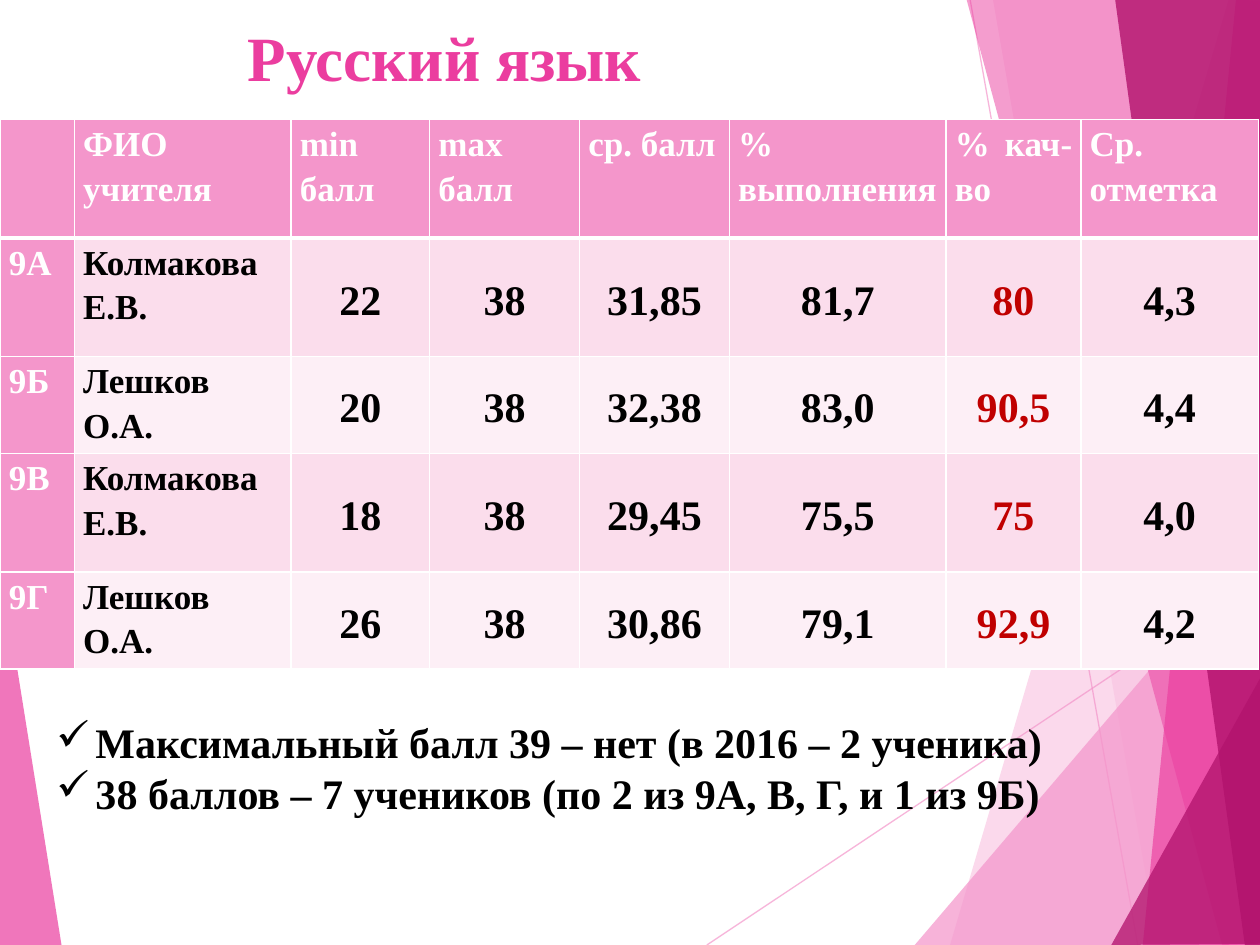
from lxml.etree import SubElement
from pptx import Presentation
from pptx.dml.color import RGBColor
from pptx.enum.shapes import MSO_CONNECTOR as Connector
from pptx.enum.text import MSO_ANCHOR as Anchor, PP_ALIGN as Align
from pptx.oxml.ns import qn
from pptx.util import Inches, Pt

COLORS = {
    "light": "F496CB", "pink": "EB3D9F", "dark": "B2136D",
    "band": "FBDDEC", "pale": "FDEFF6",
    "white": "FFFFFF", "black": "000000", "red": "C00000",
}


def set_alpha(fill_parent, percent):
    color = fill_parent.find(".//" + qn("a:srgbClr"))
    SubElement(color, qn("a:alpha"), val=str(percent * 1000))


def write(paragraph, text, size, color, **formats):
    run = paragraph.add_run()
    run.text = text
    for name, value in {"name": "Times New Roman", "size": Pt(size), "bold": True}.items():
        setattr(run.font, name, value)
    run.font.color.rgb = RGBColor.from_string(COLORS[color])
    for name, value in formats.items():
        setattr(paragraph, name, value)


presentation = Presentation()
presentation.slide_width = Inches(10)
presentation.slide_height = Inches(7.5)
slide = presentation.slides.add_slide(presentation.slide_layouts[6])
shapes = slide.shapes

for ends in [(5.61, 7.5, 10.01, 4.57), (7.7, 0, 9.03, 7.5)]:
    line = shapes.add_connector(Connector.STRAIGHT, *[Inches(value) for value in ends])
    line.line.width = Pt(0.75)
    line.line.color.rgb = RGBColor.from_string(COLORS["light"])
    properties = line.element.spPr
    set_alpha(properties, 70)
    SubElement(properties, qn("a:effectLst"))

facets = [
    ("light", 36, [(9.75, 0), (7.54, 7.5), (10.02, 7.51), (10.01, 0.01)]),
    ("light", 20, [(7.88, -0.01), (9.19, 7.5), (10.01, 7.5), (10.01, -0.01)]),
    ("light", 72, [(7.26, 7.5), (10, 4.29), (10.01, 7.5)]),
    ("pink", 50, [(7.67, -0.01), (9.7, 7.5), (10.01, 7.49), (10.01, -0.01)]),
    ("pink", 66, [(9.81, -0.01), (9.07, 7.5), (10.01, 7.5), (10, -0.01)]),
    ("dark", 80, [(8.85, -0.01), (9.88, 7.5), (10.02, 7.5), (10, -0.01)]),
    ("dark", 76, [(8.82, 7.5), (10.02, 5.35), (10.02, 7.49)]),
    ("pink", 70, [(-0.01, 4.39), (0.49, 7.51), (-0.01, 7.5)]),
]
for color, opacity, points in facets:
    start, *rest = [(Inches(x), Inches(y)) for x, y in points]
    builder = shapes.build_freeform(*start)
    builder.add_line_segments(rest, close=True)
    facet = builder.convert_to_shape()
    facet.shadow.inherit = False
    facet.line.fill.background()
    facet.fill.solid()
    facet.fill.fore_color.rgb = RGBColor.from_string(COLORS[color])
    set_alpha(facet.element.spPr, opacity)

title = shapes.add_textbox(Inches(0.12), Inches(0.05), Inches(6.94), Inches(0.87))
title.text_frame.word_wrap = True
title.text_frame.vertical_anchor = Anchor.MIDDLE
write(title.text_frame.paragraphs[0], "Русский язык ", 36, "pink",
      alignment=Align.CENTER, line_spacing=0.9)

rows = [
    ["", "ФИО учителя", "min балл", "max балл", "ср. балл", "% выполнения", "% кач-во", "Ср. отметка"],
    ["9А", "Колмакова Е.В.", "22", "38", "31,85", "81,7", "80", "4,3"],
    ["9Б", "Лешков О.А.", "20", "38", "32,38", "83,0", "90,5", "4,4"],
    ["9В", "Колмакова Е.В.", "18", "38", "29,45", "75,5", "75", "4,0"],
    ["9Г", "Лешков О.А.", "26", "38", "30,86", "79,1", "92,9", "4,2"],
]
column_widths = [0.59, 1.72, 1.1, 1.19, 1.19, 1.72, 1.07, 1.41]
row_heights = [0.94, 0.94, 0.77, 0.94, 0.77]
quality_column = 6
table = shapes.add_table(len(rows), len(column_widths), Inches(0), Inches(0.95),
                         Inches(10), Inches(4.36)).table
for column, width in zip(table.columns, column_widths):
    column.width = Inches(width)
for row, height in zip(table.rows, row_heights):
    row.height = Inches(height)

cell_format = {"margin_left": Inches(0.07), "margin_right": Inches(0.07),
               "margin_top": 0, "margin_bottom": 0}
for row_index, row in enumerate(rows):
    for column_index, text in enumerate(row):
        cell = table.cell(row_index, column_index)
        heading = row_index == 0 or column_index == 0
        numeric = row_index > 0 and column_index > 1
        for name, value in cell_format.items():
            setattr(cell, name, value)
        cell.vertical_anchor = Anchor.MIDDLE if numeric else Anchor.TOP

        properties = cell._tc.get_or_add_tcPr()
        for side in ("L", "R", "T", "B"):
            thick = (row_index, side) in [(0, "B"), (1, "T")]
            border = SubElement(properties, qn(f"a:ln{side}"), w=str(Pt(3 if thick else 1)))
            fill = SubElement(border, qn("a:solidFill"))
            SubElement(fill, qn("a:srgbClr"), val=COLORS["white"])
        cell.fill.solid()
        background = "light" if heading else "band" if row_index % 2 else "pale"
        cell.fill.fore_color.rgb = RGBColor.from_string(COLORS[background])

        if text:
            color = "white" if heading else "red" if column_index == quality_column else "black"
            write(cell.text_frame.paragraphs[0], text, 24 if numeric else 20, color,
                  alignment=Align.CENTER if numeric else Align.JUSTIFY,
                  line_spacing=1.15, space_after=Pt(10))

notes = [
    "Максимальный балл 39 – нет (в 2016 – 2 ученика)",
    "38 баллов – 7 учеников (по 2 из 9А, В, Г, и 1 из 9Б)",
]
results = shapes.add_textbox(Inches(0.35), Inches(5.64), Inches(9.06), Inches(0.91))
frame = results.text_frame
frame.word_wrap = True
for index, note in enumerate(notes):
    paragraph = frame.add_paragraph() if index else frame.paragraphs[0]
    write(paragraph, note, 24, "black")
    properties = paragraph._p.get_or_add_pPr()
    indent = Inches(0.31)
    properties.set("marL", str(indent))
    properties.set("indent", str(-indent))
    SubElement(properties, qn("a:buChar"), char="✓")

presentation.save("out.pptx")
